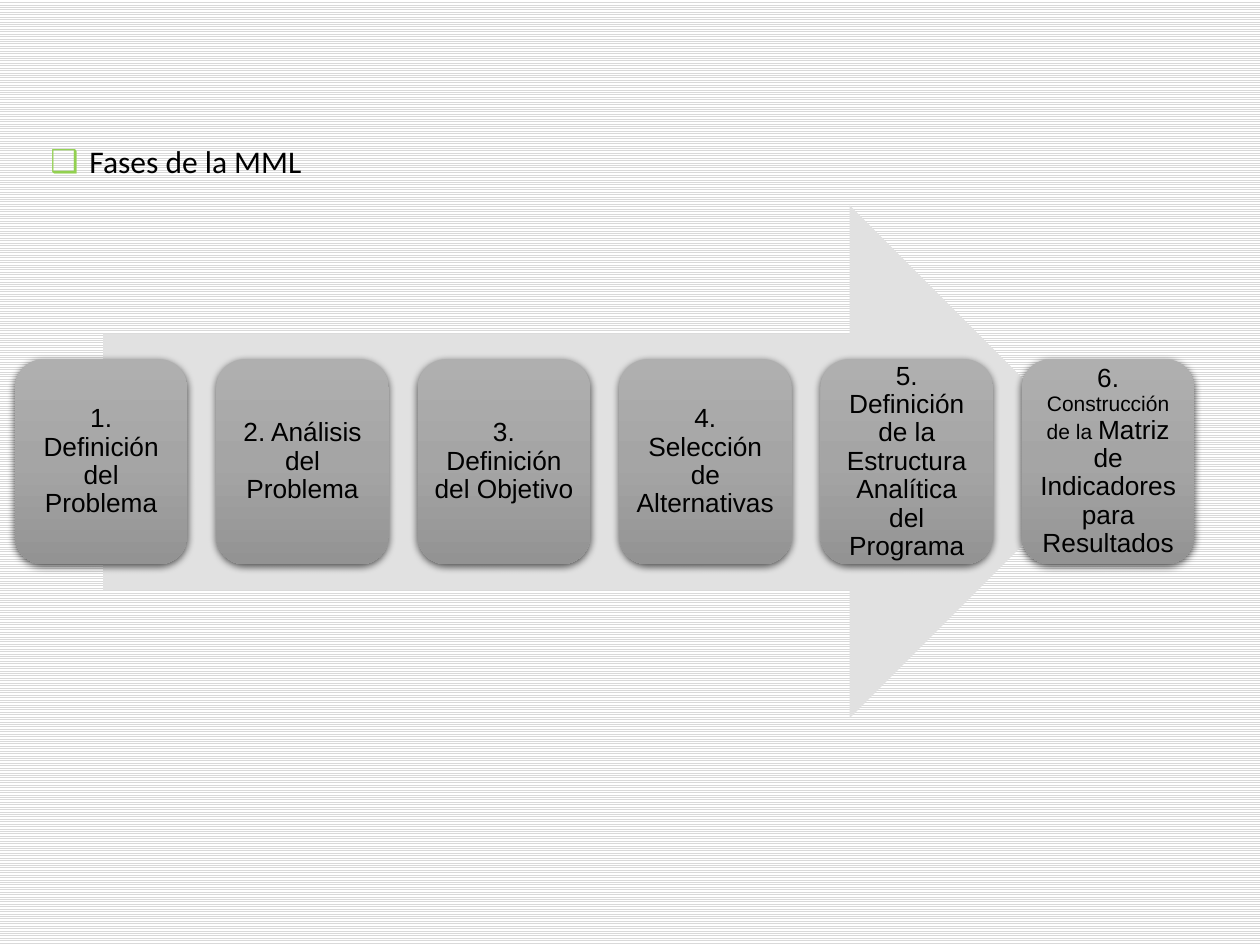
from lxml import etree
from pptx import Presentation
from pptx.dml.color import RGBColor
from pptx.enum.dml import MSO_PATTERN
from pptx.enum.shapes import MSO_SHAPE
from pptx.enum.text import MSO_ANCHOR, MSO_AUTO_SIZE, PP_ALIGN
from pptx.oxml.ns import qn
from pptx.util import Cm, Pt

RECT, ARROW, CARD = MSO_SHAPE.RECTANGLE, MSO_SHAPE.RIGHT_ARROW, MSO_SHAPE.ROUNDED_RECTANGLE
STRIPES = MSO_PATTERN.LIGHT_HORIZONTAL
CENTER, JUSTIFY = PP_ALIGN.CENTER, PP_ALIGN.JUSTIFY
MIDDLE, TOP = MSO_ANCHOR.MIDDLE, MSO_ANCHOR.TOP
GROW = MSO_AUTO_SIZE.SHAPE_TO_FIT_TEXT

COLORS = {"text": "000000", "bullet": "92D050", "arrow": "E1E1E1", "stripe": "D9D9D9",
          "paper": "FFFFFF", "shadow": "000000"}
CARD_STOPS = {0: "AFAFAF", 50: "A5A5A5", 100: "939393"}
PHASES = [
    [("1. Definición del Problema", 15)],
    [("2. Análisis del Problema", 15)],
    [("3. Definición del Objetivo", 15)],
    [("4. Selección de Alternativas", 15)],
    [("5. Definición de la Estructura Analítica del Programa", 15)],
    [("6. ", 15), ("Construcción de la ", 12), ("Matriz de Indicadores para Resultados", 15)],
]


def rgb(name):
    """Return the named colour."""
    return RGBColor.from_string(COLORS[name])


def apply(target, **values):
    """Set each given attribute on the target."""
    for name, value in values.items():
        setattr(target, name, value)


def add_xml(parent, tag, **attributes):
    """Append a DrawingML element and return it."""
    return etree.SubElement(parent, qn(f"a:{tag}"), attributes)


def add_run(p, text, font, size):
    """Add a run of black text."""
    r = p.add_run()
    r.text = text
    apply(r.font, name=font, size=Pt(size))
    r.font.color.rgb = rgb("text")


def add_plain_shape(shapes, kind, left, top, width, height):
    """Add a shape without line or shadow."""
    sp = shapes.add_shape(kind, left, top, width, height)
    sp.line.fill.background()
    sp.shadow.inherit = False
    return sp


def add_backdrop(s, width, height):
    """Lay the striped paper behind everything."""
    sp = add_plain_shape(s.shapes, RECT, 0, 0, width, height)
    sp.fill.patterned()
    sp.fill.pattern = STRIPES
    sp.fill.fore_color.rgb = rgb("stripe")
    sp.fill.back_color.rgb = rgb("paper")
    s.shapes._spTree.insert(2, sp._element)


def add_heading(s, left, top, width, height):
    """Place the bulleted heading in the body placeholder."""
    s.shapes.title._element.getparent().remove(s.shapes.title._element)
    sp = s.placeholders[1]
    apply(sp, left=left, top=top, width=width, height=height)
    tf = sp.text_frame
    apply(tf, word_wrap=True, auto_size=GROW, vertical_anchor=TOP)
    p = tf.paragraphs[0]
    pPr = p._p.get_or_add_pPr()
    pPr.set("marL", str(Cm(0.79)))
    pPr.set("indent", str(Cm(-0.79)))
    add_xml(add_xml(pPr, "buClr"), "srgbClr", val=COLORS["bullet"])
    add_xml(pPr, "buFont", typeface="Arial")
    add_xml(pPr, "buChar", char="❑")
    apply(p, alignment=JUSTIFY, line_spacing=0.9, space_before=Pt(0))
    add_run(p, "Fases de la MML", "Calibri", 18)


def style_card(sp):
    """Give a card its vertical gradient and soft shadow."""
    sp.fill.gradient()
    sp.fill.gradient_angle = 270
    stops = sp._element.spPr.find(".//" + qn("a:gsLst"))
    stops.clear()
    for position, color in CARD_STOPS.items():
        add_xml(add_xml(stops, "gs", pos=str(position * 1000)), "srgbClr", val=color)
    effects = sp._element.spPr.find(qn("a:effectLst"))
    shadow = add_xml(effects, "outerShdw", blurRad=str(Pt(4.5)), dist=str(Pt(1.5)),
                     dir="5400000", algn="ctr", rotWithShape="0")
    add_xml(add_xml(shadow, "srgbClr", val=COLORS["shadow"]), "alpha", val="63000")


def add_card(shapes, runs, left, top, width, height):
    """Add one phase card with its text."""
    sp = add_plain_shape(shapes, CARD, left, top, width, height)
    style_card(sp)
    tf = sp.text_frame
    inset = Cm(0.16)
    apply(tf, word_wrap=True, vertical_anchor=MIDDLE, margin_left=inset,
          margin_right=inset, margin_top=inset, margin_bottom=inset)
    p = tf.paragraphs[0]
    apply(p, alignment=CENTER, line_spacing=0.9)
    for text, size in runs:
        add_run(p, text, "Arial", size)


def add_process(s, left, top, width, height):
    """Add the arrow and an even row of phase cards centred on it."""
    shapes = s.shapes.add_group_shape().shapes
    arrow = add_plain_shape(shapes, ARROW, left + Cm(1.78), top, Cm(20.22), height)
    arrow.fill.solid()
    arrow.fill.fore_color.rgb = rgb("arrow")
    card_w, card_h = Cm(3.48), Cm(4.14)
    pitch = (width - card_w) // (len(PHASES) - 1)
    for i, runs in enumerate(PHASES):
        add_card(shapes, runs, left + i * pitch, top + (height - card_h) // 2, card_w, card_h)


def main():
    """Build and save the slide."""
    prs = Presentation()
    prs.slide_width, prs.slide_height = Cm(25.4), Cm(19.05)
    s = prs.slides.add_slide(prs.slide_layouts[1])
    add_backdrop(s, prs.slide_width, prs.slide_height)
    add_heading(s, Cm(0.76), Cm(2.82), Cm(21.92), Cm(0.94))
    add_process(s, Cm(0.3), Cm(4.14), Cm(23.78), Cm(10.34))
    prs.save("out.pptx")


if __name__ == "__main__":
    main()
